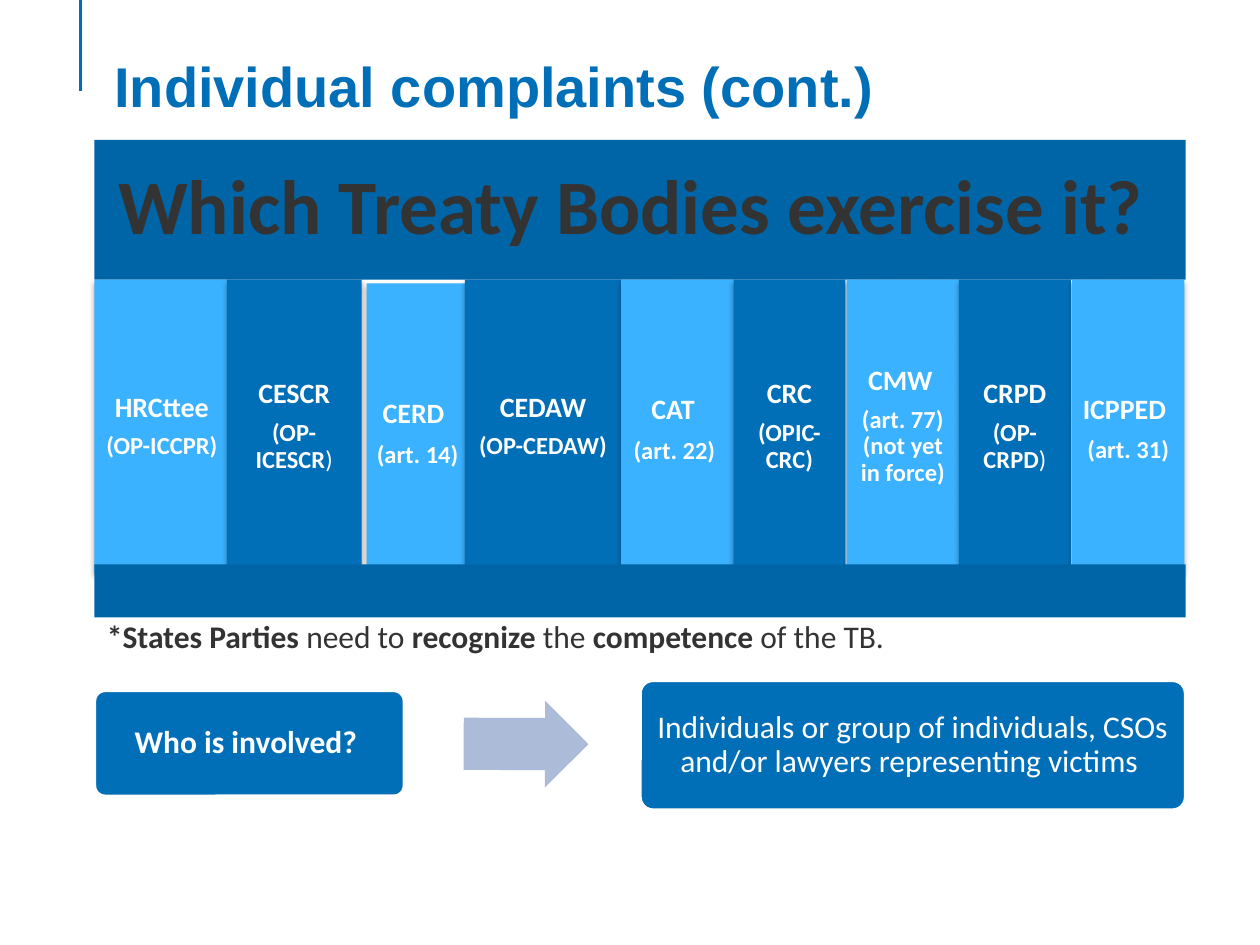
from typing import NamedTuple

from lxml import etree
from pptx import Presentation
from pptx.dml.color import RGBColor
from pptx.enum.shapes import MSO_CONNECTOR, MSO_SHAPE
from pptx.enum.text import MSO_ANCHOR, PP_ALIGN
from pptx.oxml.ns import qn
from pptx.util import Pt

RECT = MSO_SHAPE.RECTANGLE
ROUND = MSO_SHAPE.ROUNDED_RECTANGLE
ARROW = MSO_SHAPE.RIGHT_ARROW
LINE = MSO_CONNECTOR.STRAIGHT
MIDDLE = MSO_ANCHOR.MIDDLE
CENTER = PP_ALIGN.CENTER

PX = 9144
BLUE, LIGHT, DEEP = "006FB7", "3BB2FF", "0065A6"
WHITE, INK, PALE = "FFFFFF", "333333", "ABBBD8"


class Run(NamedTuple):
    text: str
    size: int
    bold: bool = True


class Box(NamedTuple):
    left: int
    top: int
    width: int
    height: int


class Body(NamedTuple):
    box: Box
    name: list[Run]
    basis: list[Run]


def paint(target, color: str) -> None:
    """Give a fill a solid colour."""
    target.solid()
    target.fore_color.rgb = RGBColor.from_string(color)


def place(box: Box) -> list[int]:
    """Turn a box in px into EMU."""
    return [n * PX for n in box]


def write(frame, lines: list[list[Run]], color: str, face: str = "Calibri") -> None:
    """Write one paragraph for each list of runs."""
    frame.word_wrap = True
    for i, runs in enumerate(lines):
        para = frame.paragraphs[0] if i == 0 else frame.add_paragraph()
        for item in runs:
            run = para.add_run()
            run.text = item.text
            run.font.name = face
            run.font.size = Pt(item.size)
            run.font.bold = item.bold
            run.font.color.rgb = RGBColor.from_string(color)


def center(frame, inset: int) -> None:
    """Centre the text of a frame both ways."""
    frame.vertical_anchor = MIDDLE
    frame.margin_left = frame.margin_right = inset * PX
    frame.margin_top = frame.margin_bottom = inset * PX
    for para in frame.paragraphs:
        para.alignment = CENTER
        para.line_spacing = 0.9
        para.space_after = Pt(6)


def block(slide, kind, box: Box, color: str, edge: str = ""):
    """Draw a flat preset shape."""
    shape = slide.shapes.add_shape(kind, *place(box))
    shape.shadow.inherit = False
    paint(shape.fill, color)
    if edge:
        paint(shape.line.fill, edge)
        shape.line.width = Pt(2)
    else:
        shape.line.fill.background()
    return shape


def shade(shape) -> None:
    """Cast a soft shadow below a shape."""
    effects = shape.element.spPr.find(qn("a:effectLst"))
    outer = etree.SubElement(effects, qn("a:outerShdw"), blurRad="40000",
                             dist="23000", dir="5400000", rotWithShape="0")
    tint = etree.SubElement(outer, qn("a:srgbClr"), val="000000")
    etree.SubElement(tint, qn("a:alpha"), val="35000")


def label(slide, box: Box, runs: list[Run], color: str, face: str) -> None:
    """Add a line of plain text."""
    frame = slide.shapes.add_textbox(*place(box)).text_frame
    write(frame, [runs], color, face)


def column(slide, body: Body, color: str) -> None:
    """Draw the column of one treaty body."""
    shape = block(slide, RECT, body.box, color)
    shade(shape)
    write(shape.text_frame, [body.name, body.basis], WHITE)
    center(shape.text_frame, 7)


def card(slide, box: Box, run: Run) -> None:
    """Draw a rounded card with centred text."""
    shape = block(slide, ROUND, box, BLUE, WHITE)
    shape.adjustments[0] = 0.1
    write(shape.text_frame, [[run]], WHITE)
    center(shape.text_frame, 10)


def slot(i: int) -> Box:
    """Return one of the five equal columns on the right."""
    return Box(493 + i * 179 // 2, 222, 89, 233)


BODIES = [
    Body(Box(75, 222, 107, 233), [Run("HRCttee", 16)], [Run("(OP-ICCPR)", 14)]),
    Body(Box(180, 222, 107, 233), [Run("CESCR", 16)],
         [Run("(OP-ICESCR", 14), Run(")", 14, False)]),
    Body(Box(291, 225, 81, 233), [Run("CERD", 16), Run(" ", 21)],
         [Run("(art. 14) ", 14)]),
    Body(Box(369, 222, 124, 233), [Run("CEDAW", 16)], [Run("(OP-CEDAW)", 14)]),
    Body(slot(0), [Run("CAT", 16), Run(" ", 21)], [Run("(art. 22) ", 14)]),
    Body(slot(1), [Run("CRC", 16)], [Run("(OPIC-CRC)", 14)]),
    Body(slot(2), [Run("CMW", 16), Run(" ", 13)],
         [Run("(art. 77) (not yet in force)", 14)]),
    Body(slot(3), [Run("CRPD", 16)], [Run("(OP-CRPD", 14), Run(")", 14, False)]),
    Body(slot(4), [Run("ICPPED", 16), Run(" ", 20)], [Run("(art. 31)", 14)]),
]

NOTE = [
    Run("*States Parties ", 18), Run("need to ", 18, False),
    Run("recognize", 18), Run(" the ", 18, False),
    Run("competence ", 18), Run("of the TB.", 18, False),
]


def main() -> None:
    """Build and save the slide."""
    deck = Presentation()
    deck.slide_width, deck.slide_height = 1000 * PX, 750 * PX
    slide = deck.slides.add_slide(deck.slide_layouts[6])

    rule = slide.shapes.add_connector(LINE, *place(Box(64, 0, 64, 72)))
    paint(rule.line.fill, BLUE)
    rule.line.width = Pt(2)
    etree.SubElement(rule.element.spPr, qn("a:effectLst"))
    label(slide, Box(81, 36, 827, 119),
          [Run("Individual complaints (cont.)", 32)], BLUE, "Arial")

    head = block(slide, RECT, Box(75, 111, 866, 111), DEEP)
    write(head.text_frame, [[Run("Which Treaty Bodies exercise it? ", 44)]], INK)
    center(head.text_frame, 18)
    for i, body in enumerate(BODIES):
        column(slide, body, BLUE if i % 2 else LIGHT)
    block(slide, RECT, Box(75, 448, 866, 42), DEEP)

    card(slide, Box(75, 548, 246, 84), Run("Who is involved? ", 18))
    arrow = block(slide, ARROW, Box(368, 556, 99, 69), PALE)
    arrow.adjustments[0] = 0.6
    arrow.rotation = 0.2
    card(slide, Box(508, 540, 433, 103),
         Run("Individuals or group of individuals, CSOs and/or lawyers "
             "representing victims ", 18, False))
    label(slide, Box(75, 485, 780, 40), NOTE, INK, "Calibri")
    deck.save("out.pptx")


if __name__ == "__main__":
    main()
